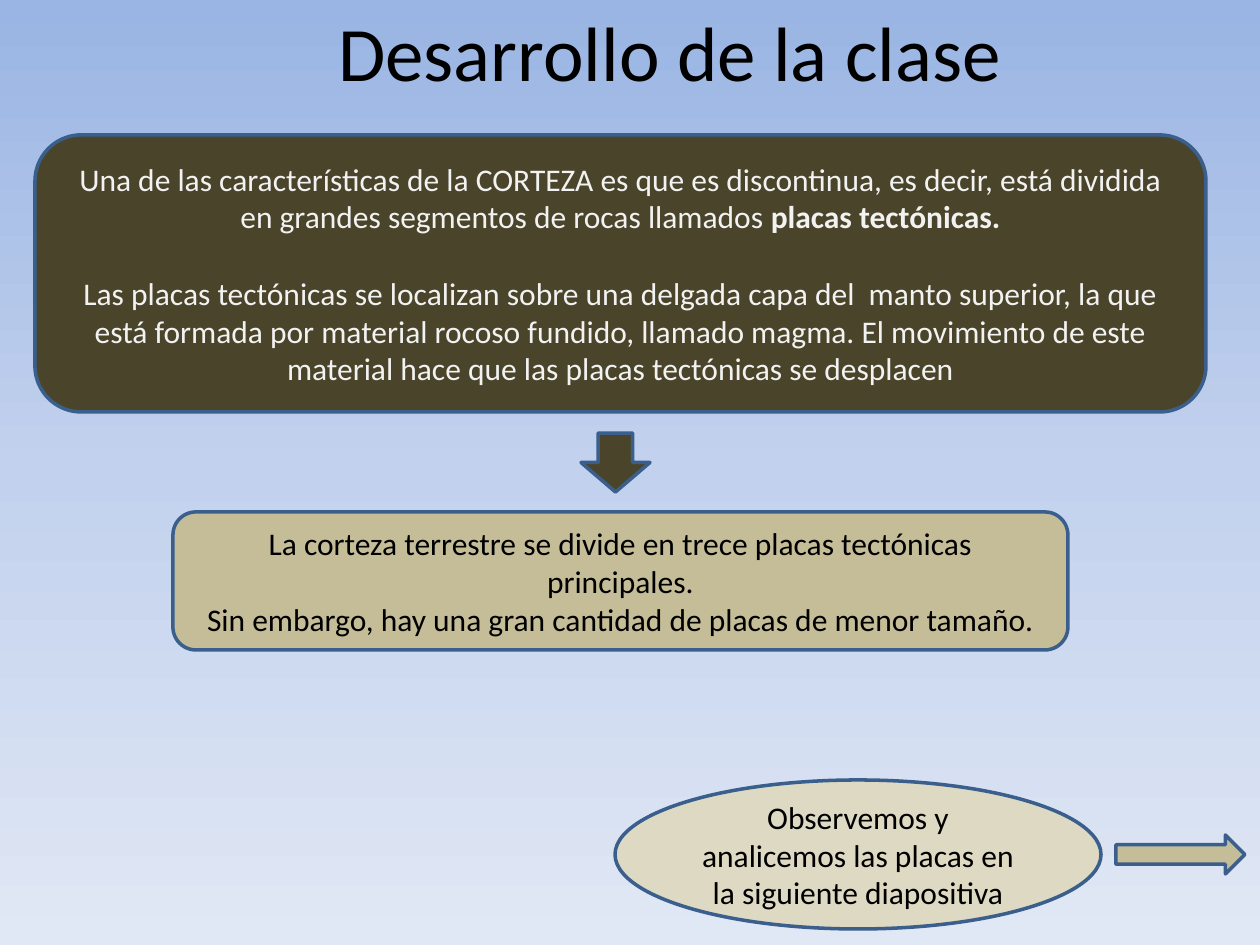
from copy import deepcopy

from pptx import Presentation
from pptx.dml.color import RGBColor
from pptx.enum.shapes import MSO_SHAPE as SHAPE
from pptx.enum.text import MSO_ANCHOR as ANCHOR, PP_ALIGN as ALIGN
from pptx.oxml.ns import qn
from pptx.util import Emu, Pt

PX = 914400 / 126  # EMU per px
FONT = "Calibri"
BLACK = RGBColor(0x00, 0x00, 0x00)
OFF_WHITE = RGBColor(0xF2, 0xF2, 0xF2)
DARK_OLIVE = RGBColor(0x4A, 0x45, 0x2A)
TAN = RGBColor(0xC4, 0xBD, 0x97)
CREAM = RGBColor(0xDD, 0xD9, 0xC3)
BORDER = RGBColor(0x3A, 0x5F, 0x8C)
SKY_TOP = RGBColor(0x9A, 0xB5, 0xE4)
SKY_MIDDLE = RGBColor(0xC2, 0xD1, 0xED)
SKY_BOTTOM = RGBColor(0xE1, 0xE8, 0xF5)


def px(*lengths):
    return [Emu(round(n * PX)) for n in lengths]


def write(sp, paragraphs, color, size=18, gap=0):
    """Fill a shape with centred paragraphs, each a list of (text, bold) runs."""
    tf = sp.text_frame
    tf.word_wrap = True
    tf.vertical_anchor = ANCHOR.MIDDLE
    for i, runs in enumerate(paragraphs):
        p = tf.add_paragraph() if i else tf.paragraphs[0]
        p.alignment = ALIGN.CENTER
        if i and gap:
            p.space_before = Pt(gap)
        for text, bold in runs:
            r = p.add_run()
            r.text = text
            r.font.name = FONT
            r.font.size = Pt(size)
            r.font.bold = bold
            r.font.color.rgb = color


def add_block(s, kind, box, fill):
    sp = s.shapes.add_shape(kind, *px(*box))
    sp.shadow.inherit = False
    sp.fill.solid()
    sp.fill.fore_color.rgb = fill
    sp.line.color.rgb = BORDER
    sp.line.width = Pt(2)
    return sp


def paint_background(s):
    fill = s.background.fill
    fill.gradient()
    fill.gradient_angle = 270
    # The default gradient has two stops; a third goes between them
    first = next(s.element.iter(qn("a:gs")))
    first.addnext(deepcopy(first))
    stops = ((0, SKY_TOP), (0.5, SKY_MIDDLE), (1, SKY_BOTTOM))
    for stop, (position, color) in zip(fill.gradient_stops, stops):
        stop.position = position
        stop.color.rgb = color


def add_title(s, box):
    sp = s.shapes.add_textbox(*px(*box))
    write(sp, [[("Desarrollo de la clase", False)]], BLACK, size=44)


def add_explanation(s, x, y, w, h):
    """Dark panel, the arrow below it and the conclusion box."""
    panel = add_block(s, SHAPE.ROUNDED_RECTANGLE, (x, y, w, h), DARK_OLIVE)
    write(panel, [
        [("Una de las características de la CORTEZA es que es discontinua, es decir, "
          "está dividida en grandes segmentos de rocas llamados ", False),
         ("placas tectónicas.", True)],
        [("Las placas tectónicas se localizan sobre una delgada capa del  manto superior, "
          "la que está formada por material rocoso fundido, llamado magma. El movimiento "
          "de este material hace que las placas tectónicas se desplacen", False)],
    ], OFF_WHITE, gap=22)

    conclusion = add_block(s, SHAPE.ROUNDED_RECTANGLE,
                           (x + 138, y + 377, w - 276, h // 2), TAN)
    write(conclusion, [
        [("La corteza terrestre se divide en trece placas tectónicas principales.", False)],
        [("Sin embargo, hay una gran cantidad de placas de menor tamaño.", False)],
    ], BLACK)

    add_block(s, SHAPE.DOWN_ARROW, (x + 546, y + h + 21, 69, 59), DARK_OLIVE)


def add_next_step(s, x, y, w, h):
    """Closing ellipse with an arrow centred on its right."""
    ellipse = add_block(s, SHAPE.OVAL, (x, y, w, h), CREAM)
    write(ellipse, [[("Observemos y analicemos las placas en la siguiente diapositiva",
                      False)]], BLACK)
    arrow_h = 39
    add_block(s, SHAPE.RIGHT_ARROW,
              (x + w + 15, y + (h - arrow_h) // 2, 129, arrow_h), TAN)


def main():
    prs = Presentation()
    prs.slide_width, prs.slide_height = px(1260, 945)
    s = prs.slides.add_slide(prs.slide_layouts[6])
    paint_background(s)
    add_title(s, (273, -3, 794, 107))
    add_explanation(s, 35, 135, 1171, 277)
    add_next_step(s, 615, 780, 486, 149)
    prs.save("out.pptx")


if __name__ == "__main__":
    main()
